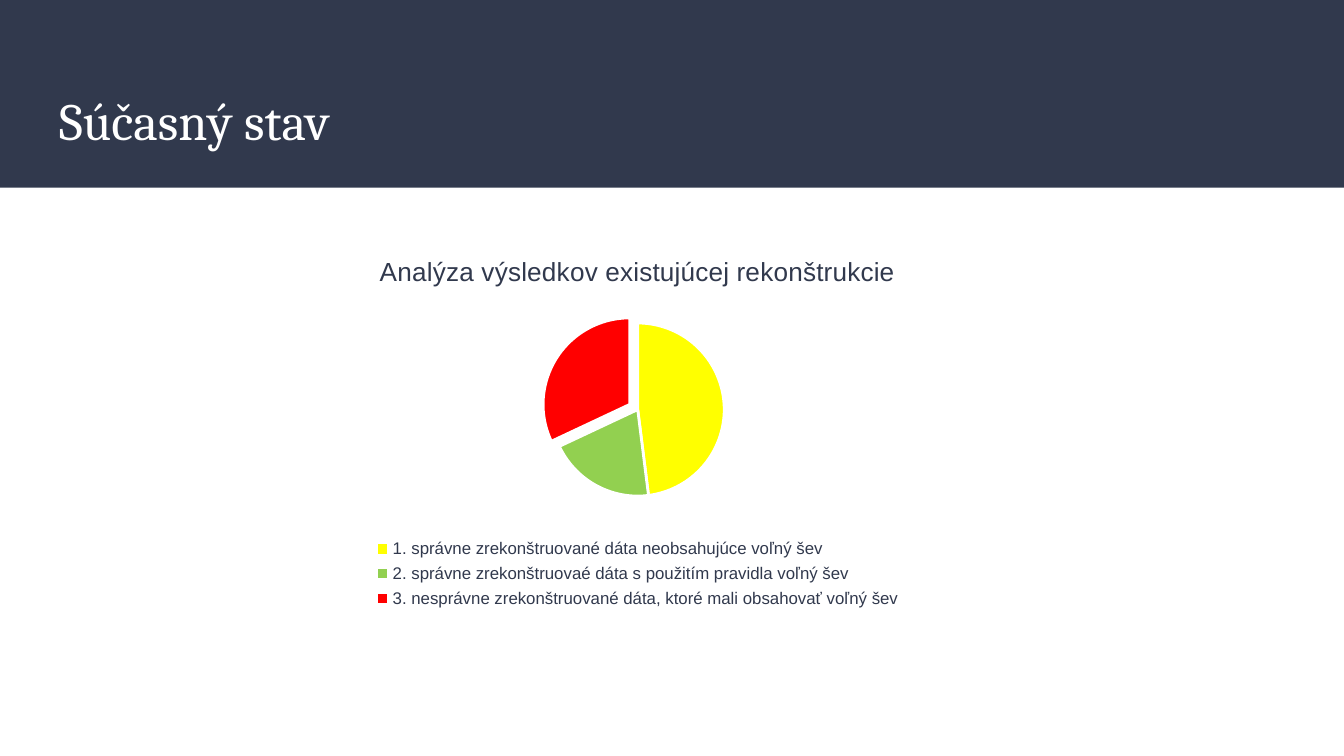
from pptx import Presentation
from pptx import util as u
from pptx.chart.data import CategoryChartData
from pptx.dml.color import RGBColor
from pptx.enum import chart as charts, shapes, text
from pptx.oxml import parse_xml
from pptx.oxml.ns import nsdecls

COLORS = {
    "navy": "31394D",
    "white": "FFFFFF",
    "yellow": "FFFF00",
    "green": "92D050",
    "red": "FF0000",
}
RESULTS = [
    ("1. správne zrekonštruované dáta neobsahujúce voľný šev", 48, "yellow"),
    ("2. správne zrekonštruovaé dáta s použitím pravidla voľný šev", 20, "green"),
    ("3. nesprávne zrekonštruované dáta, ktoré mali obsahovať voľný šev", 32, "red"),
]


def color(name):
    return RGBColor.from_string(COLORS[name])


class SlideBuilder:
    heading_font = "Cambria"
    body_font = "Arial"

    def __init__(self, presentation):
        self.slide = presentation.slides.add_slide(presentation.slide_layouts[5])

    def style_font(self, font, name, size, color_name):
        font.name = name
        font.size = u.Pt(size)
        font.bold = False
        font.color.rgb = color(color_name)

    def band(self, left, top, width, height):
        """Add a filled rectangle behind everything else."""
        shape = self.slide.shapes.add_shape(
            shapes.MSO_SHAPE.RECTANGLE, *map(u.Pt, (left, top, width, height)))
        shape.shadow.inherit = False
        shape.fill.solid()
        shape.fill.fore_color.rgb = color("navy")
        shape.line.fill.background()
        self.slide.shapes._spTree.insert(2, shape._element)

    def title(self, content, left, top, width, height):
        shape = self.slide.shapes.title
        shape.left, shape.top, shape.width, shape.height = map(
            u.Pt, (left, top, width, height))
        frame = shape.text_frame
        frame.word_wrap = True
        frame.auto_size = text.MSO_AUTO_SIZE.NONE
        frame.vertical_anchor = text.MSO_ANCHOR.MIDDLE
        frame.margin_left = frame.margin_right = u.Pt(7.2)
        frame.margin_top = frame.margin_bottom = u.Pt(7.2)
        paragraph = frame.paragraphs[0]
        paragraph.alignment = text.PP_ALIGN.LEFT
        run = paragraph.add_run()
        run.text = content
        self.style_font(run.font, self.heading_font, 28, "white")

    def pie(self, heading, results, exploded, left, top, width, height):
        """Add a pie chart; exploded is the index of the slice pulled out."""
        data = CategoryChartData()
        data.categories = [label for label, _, _ in results]
        data.add_series(heading, [value for _, value, _ in results])
        chart = self.slide.shapes.add_chart(
            charts.XL_CHART_TYPE.PIE,
            *map(u.Pt, (left, top, width, height)), data).chart
        self.style_font(chart.font, self.body_font, 10, "navy")

        chart.has_title = True
        run = chart.chart_title.text_frame.paragraphs[0].add_run()
        run.text = heading
        self.style_font(run.font, self.body_font, 14, "navy")
        chart.chart_title.include_in_layout = False

        chart.has_legend = True
        chart.legend.position = charts.XL_LEGEND_POSITION.BOTTOM
        chart.legend.include_in_layout = False
        self.style_font(chart.legend.font, self.body_font, 9, "navy")

        plot = chart.plots[0]
        plot.vary_by_categories = True
        series = plot.series[0]
        for index, (_, _, color_name) in enumerate(results):
            point_format = series.points[index].format
            point_format.fill.solid()
            point_format.fill.fore_color.rgb = color(color_name)
            point_format.line.color.rgb = color("white")
            point_format.line.width = u.Pt(1.5)
        point = series._element.findall("{*}dPt")[exploded]
        point.find("{*}spPr").addprevious(
            parse_xml(f'<c:explosion {nsdecls("c")} val="11"/>'))


def main():
    presentation = Presentation()
    presentation.slide_width = u.Pt(720)
    presentation.slide_height = u.Pt(405)
    builder = SlideBuilder(presentation)
    builder.band(0, 0, 720, 100.5)
    builder.title("Súčasný stav", 24.5, 39.6, 671, 49)
    builder.pie("Analýza výsledkov existujúcej rekonštrukcie", RESULTS, 2,
                146.9, 126, 389.5, 203)
    presentation.save("out.pptx")


if __name__ == "__main__":
    main()
